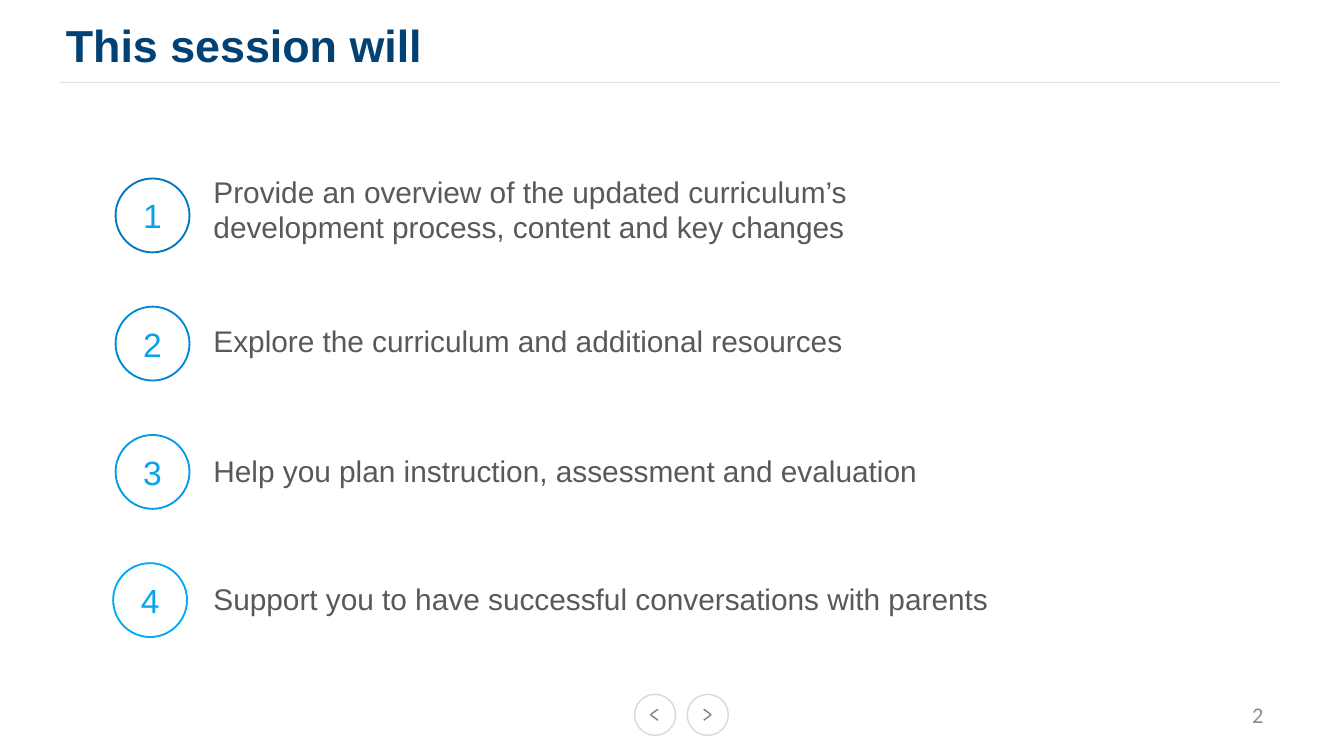
from lxml.etree import SubElement
from pptx import Presentation
from pptx.dml.color import RGBColor
from pptx.enum.shapes import MSO_CONNECTOR, MSO_SHAPE
from pptx.enum.text import MSO_ANCHOR as ANCHOR, PP_ALIGN as ALIGN
from pptx.oxml.ns import qn
from pptx.util import Pt

COLORS = {
    "title": "014174", "body": "595959", "number": "08A2E8", "page": "8C8C8C",
    "rule": "E0E0E0", "button": "D9D9D9", "arrow": "808080",
}

prs = Presentation()
prs.slide_width, prs.slide_height = Pt(720), Pt(405)
slide = prs.slides.add_slide(prs.slide_layouts[6])
shapes = slide.shapes


def write(box, text, size, color, font="Arial", bold=False,
          align=ALIGN.LEFT, anchor=ANCHOR.TOP, inset=(0, 0)):
    frame = box.text_frame
    frame.word_wrap = True
    frame.vertical_anchor = anchor
    frame.margin_left = frame.margin_right = Pt(inset[0])
    frame.margin_top = frame.margin_bottom = Pt(inset[1])
    paragraph = frame.paragraphs[0]
    paragraph.alignment = align
    run = paragraph.add_run()
    run.text = text
    run.font.name, run.font.size, run.font.bold = font, Pt(size), bold
    run.font.color.rgb = RGBColor.from_string(color)


def outline(kind, x1, y1, x2, y2, color, width=0.75):
    """Draw an unfilled ellipse in the given bounds, or a line between the points."""
    if kind == "line":
        item = shapes.add_connector(MSO_CONNECTOR.STRAIGHT, Pt(x1), Pt(y1), Pt(x2), Pt(y2))
        SubElement(item._element.spPr, qn("a:effectLst"))
    else:
        item = shapes.add_shape(MSO_SHAPE.OVAL, Pt(x1), Pt(y1), Pt(x2 - x1), Pt(y2 - y1))
        item.shadow.inherit = False
        item.fill.background()
    item.line.color.rgb = RGBColor.from_string(color)
    item.line.width = Pt(width)
    return item


# Previous and next buttons: centre of circle, tip of arrow, direction of its arms
for center_x, tip_x, arm in [(351, 348.5, 4), (379.2, 381, -4)]:
    outline("ellipse", center_x - 11, 372, center_x + 11, 394, COLORS["button"])
    for rise in (-3, 3):
        outline("line", tip_x, 382.9, tip_x + arm, 382.9 + rise, COLORS["arrow"])

# Title and rule
outline("line", 31.7, 44.2, 686.2, 44.2, COLORS["rule"])
title = shapes.add_textbox(Pt(35.3), Pt(10.1), Pt(480), Pt(28))
write(title, "This session will", 24, COLORS["title"], bold=True, anchor=ANCHOR.MIDDLE)

# Page number
page = shapes.add_textbox(Pt(442.8), Pt(372.2), Pt(241.2), Pt(21.6))
write(page, "2", 12, COLORS["page"], font="Calibri", align=ALIGN.RIGHT,
      anchor=ANCHOR.MIDDLE, inset=(7.2, 3.6))

# Numbered goals: text, top and height of text, left of circle, ring colour
goals = [
    ("Provide an overview of the updated curriculum’s development process, "
     "content and key changes", 89.3, 46, 61.9, "0277BD"),
    ("Explore the curriculum and additional resources", 169.5, 26.6, 61.9, "0288D1"),
    ("Help you plan instruction, assessment and evaluation", 239.2, 26.6, 61.9, "039BE5"),
    ("Support you to have successful conversations with parents", 307.8, 26.6, 60.6, "03A9F4"),
]
RING, PITCH = 39.6, 68.7
for i, (goal, top, height, left, ring_color) in enumerate(goals):
    ring_top = 95.6 + i * PITCH
    ring = outline("ellipse", left, ring_top, left + RING, ring_top + RING, ring_color, width=1)
    write(ring, str(i + 1), 18, COLORS["number"], align=ALIGN.CENTER, anchor=ANCHOR.MIDDLE)
    label = shapes.add_textbox(Pt(107.3), Pt(top), Pt(432), Pt(height))
    write(label, goal, 16, COLORS["body"], inset=(7.2, 3.6))

prs.save("out.pptx")
